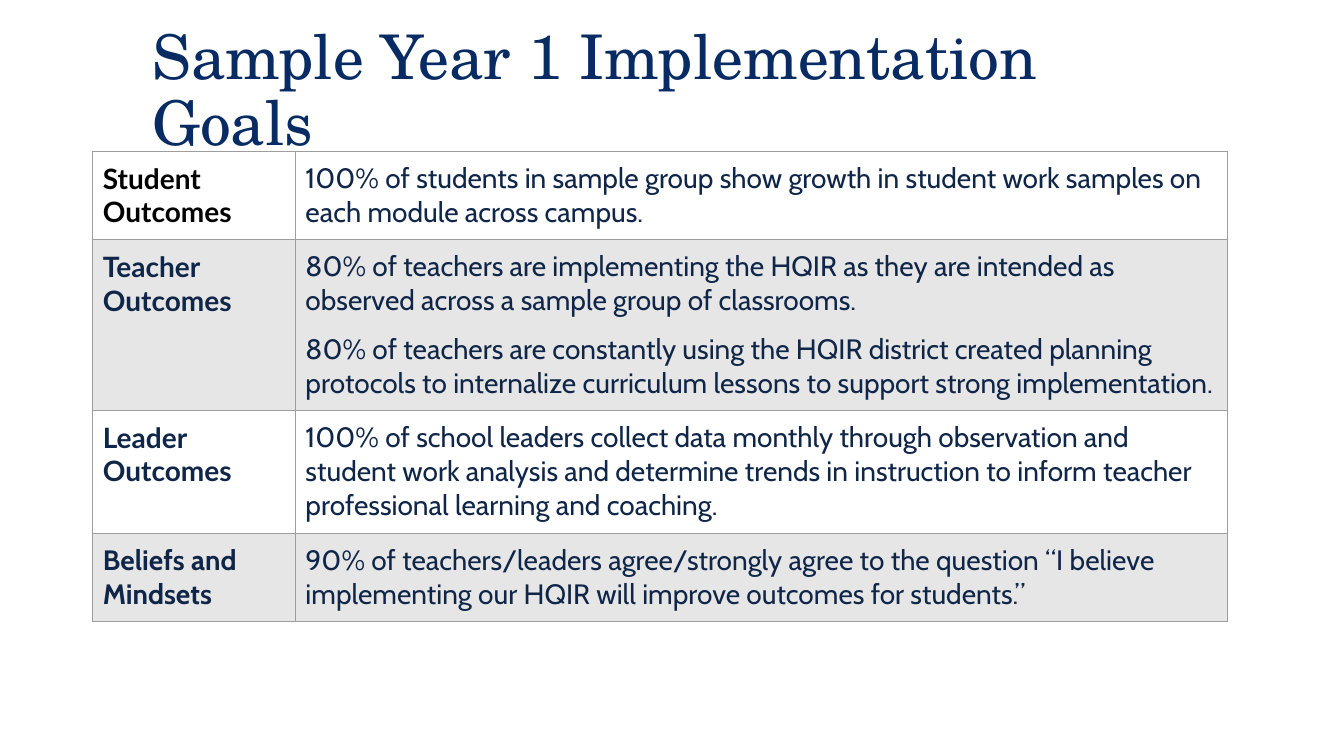
from lxml import etree
from pptx import Presentation
from pptx.dml.color import RGBColor
from pptx.enum.text import MSO_ANCHOR, MSO_AUTO_SIZE, PP_ALIGN
from pptx.oxml.ns import qn
from pptx.util import Inches, Pt

TOP = MSO_ANCHOR.TOP
NO_AUTOFIT = MSO_AUTO_SIZE.NONE
LEFT = PP_ALIGN.LEFT

TITLE_BLUE = RGBColor(0x07, 0x2B, 0x62)
NAVY = RGBColor(0x10, 0x26, 0x49)
BLACK = RGBColor(0, 0, 0)
WHITE = RGBColor(0xFF, 0xFF, 0xFF)
GRAY = RGBColor(0xE7, 0xE6, 0xE6)
BORDER_GRAY = RGBColor(0x9E, 0x9E, 0x9E)

GOALS = [
    ("Student Outcomes", "Lato", BLACK, 0.87, [
        "100% of students in sample group show growth in student work samples on each module across campus.",
    ]),
    ("Teacher Outcomes", "Lato", NAVY, 1.69, [
        "80% of teachers are implementing the HQIR as they are intended as observed across a sample group of classrooms.",
        "80% of teachers are constantly using the HQIR district created planning protocols to internalize curriculum lessons to support strong implementation.",
    ]),
    ("Leader Outcomes", "Lato", NAVY, 1.21, [
        "100% of school leaders collect data monthly through observation and student work analysis and determine trends in instruction to inform teacher professional learning and coaching.",
    ]),
    ("Beliefs and Mindsets", "Cabin", NAVY, 0.87, [
        "90% of teachers/leaders agree/strongly agree to the question “I believe implementing our HQIR will improve outcomes for students.”",
    ]),
]


def write(frame, paragraphs, font="Cabin", size=20, color=NAVY, bold=False, line_spacing=1.0):
    for index, text in enumerate(paragraphs):
        paragraph = frame.add_paragraph() if index else frame.paragraphs[0]
        paragraph.alignment = LEFT
        paragraph.line_spacing = line_spacing
        paragraph.space_before = Pt(10 if index else 0)
        run = paragraph.add_run()
        run.text = text
        run.font.name = font
        run.font.size = Pt(size)
        run.font.bold = bold
        run.font.color.rgb = color


def style_cell(cell, color):
    cell.margin_left = cell.margin_right = Inches(0.1)
    cell.margin_top = cell.margin_bottom = Inches(0.1)
    cell.vertical_anchor = TOP
    properties = cell._tc.get_or_add_tcPr()
    for side in ("a:lnL", "a:lnR", "a:lnT", "a:lnB"):
        line = etree.SubElement(properties, qn(side), w=str(Pt(0.75)))
        line_fill = etree.SubElement(line, qn("a:solidFill"))
        etree.SubElement(line_fill, qn("a:srgbClr"), val=str(BORDER_GRAY))
    cell.fill.solid()
    cell.fill.fore_color.rgb = color


prs = Presentation()
prs.slide_width = Inches(13.33)
prs.slide_height = Inches(7.5)
slide = prs.slides.add_slide(prs.slide_layouts[5])

title = slide.shapes.title
title.left, title.top = Inches(1.41), Inches(0.16)
title.width, title.height = Inches(10.51), Inches(0.82)
heading = title.text_frame
heading.margin_left = heading.margin_right = Inches(0.1)
heading.margin_top = heading.margin_bottom = Inches(0.1)
heading.vertical_anchor = TOP
heading.word_wrap = True
heading.auto_size = NO_AUTOFIT
write(heading, ["Sample Year 1 Implementation Goals"], font="TeX Gyre Schola",
      size=44, color=TITLE_BLUE, line_spacing=0.9)

goals_height = sum(goal[3] for goal in GOALS)
goals_table = slide.shapes.add_table(
    len(GOALS), 2, Inches(0.92), Inches(1.5), Inches(11.25), Inches(goals_height)).table
goals_table.first_row = False
goals_table.horz_banding = False
goals_table.columns[0].width = Inches(2.01)
goals_table.columns[1].width = Inches(9.24)

for row, (area, area_font, area_color, height, targets) in enumerate(GOALS):
    goals_table.rows[row].height = Inches(height)
    area_cell = goals_table.cell(row, 0)
    target_cell = goals_table.cell(row, 1)
    for cell in (area_cell, target_cell):
        style_cell(cell, GRAY if row % 2 else WHITE)
    write(area_cell.text_frame, [area], font=area_font, color=area_color, bold=True)
    write(target_cell.text_frame, targets)

prs.save("out.pptx")
